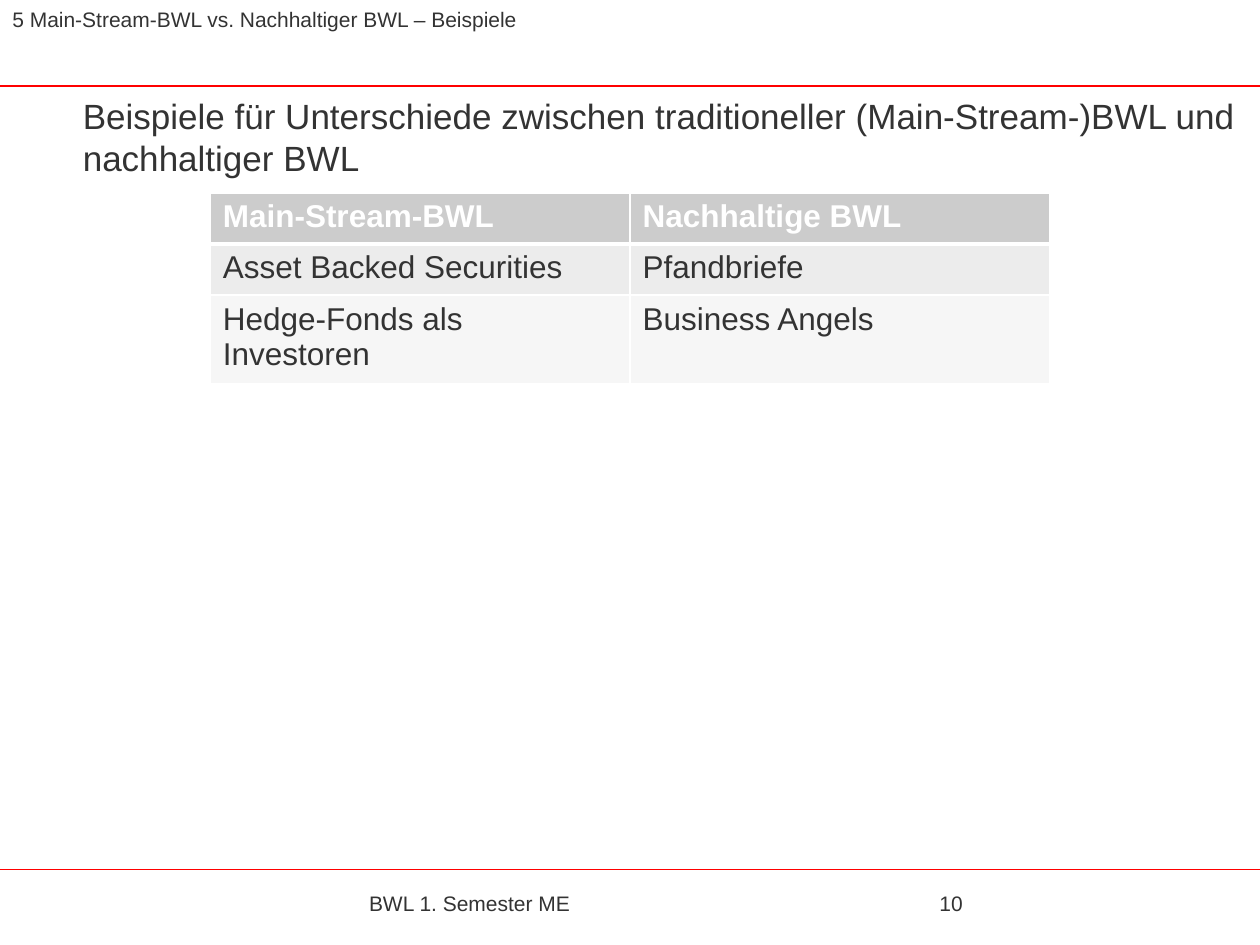
from dataclasses import dataclass

from lxml.etree import SubElement
from pptx import Presentation
from pptx.dml.color import RGBColor as Rgb
from pptx.enum.shapes import MSO_CONNECTOR as Connector
from pptx.enum.text import MSO_ANCHOR as Anchor, PP_ALIGN as Align
from pptx.oxml.ns import qn
from pptx.util import Cm, Pt


@dataclass(frozen=True)
class Theme:
    font: str = "Arial"
    text: str = "333333"
    rule: str = "FF0000"
    white: str = "FFFFFF"
    row_fills: tuple = ("CCCCCC", "ECECEC", "F6F6F6")
    small: int = 12
    body: int = 18
    title: int = 20


THEME = Theme()
SLIDE_WIDTH, SLIDE_HEIGHT = 25.4, 19.05
RULE_HEIGHTS = (1.73, 17.53)

# text, (left, top, width, height) in cm, type size, anchor, space before in points
TEXTS = [
    ("5 Main-Stream-BWL vs. Nachhaltiger BWL – Beispiele",
     (0, 0, 25.96, 0.86), THEME.small, Anchor.TOP, 1.2),
    ("Beispiele für Unterschiede zwischen traditioneller (Main-Stream-)BWL und nachhaltiger BWL",
     (1.42, 2.03, 23.98, 1.7), THEME.title, Anchor.BOTTOM, 0),
    ("BWL 1. Semester ME", (7.19, 17.78, 11, 0.84), THEME.small, Anchor.MIDDLE, 0),
    ("10", (18.69, 17.78, 5.28, 0.84), THEME.small, Anchor.MIDDLE, 0),
]

COMPARISON = [
    ("Main-Stream-BWL", "Nachhaltige BWL"),
    ("Asset Backed Securities", "Pfandbriefe"),
    ("Hedge-Fonds als Investoren", "Business Angels"),
]
TABLE_TOP, COLUMN_WIDTH = 3.89, 8.46
ROW_HEIGHTS = (1.03, 1.03, 1.68)


def style(paragraph, size, color=THEME.text, bold=False):
    font = paragraph.font
    font.name, font.size, font.bold = THEME.font, Pt(size), bold
    font.color.rgb = Rgb.from_string(color)
    paragraph.alignment = Align.LEFT


def add_rule(slide, height):
    rule = slide.shapes.add_connector(
        Connector.STRAIGHT, 0, Cm(height), Cm(SLIDE_WIDTH), Cm(height))
    rule.line.color.rgb = Rgb.from_string(THEME.rule)
    rule.line.width = Pt(1)
    SubElement(rule.element.spPr, qn("a:effectLst"))


def add_text(slide, text, place, size, anchor, space_before):
    box = slide.shapes.add_textbox(*map(Cm, place))
    frame = box.text_frame
    frame.word_wrap = True
    frame.vertical_anchor = anchor
    para = frame.paragraphs[0]
    para.text = text
    para.space_before = Pt(space_before)
    style(para, size)


def set_borders(cell, widths):
    """Draw white borders; widths maps a side (L, R, T, B) to points."""
    properties = cell._tc.get_or_add_tcPr()
    for position, (side, width) in enumerate(widths.items()):
        line = properties.makeelement(qn(f"a:ln{side}"), {"w": str(Pt(width))})
        fill = SubElement(line, qn("a:solidFill"))
        SubElement(fill, qn("a:srgbClr"), val=THEME.white)
        properties.insert(position, line)


def add_comparison(slide):
    width = COLUMN_WIDTH * len(COMPARISON[0])
    table = slide.shapes.add_table(
        len(COMPARISON), len(COMPARISON[0]), Cm((SLIDE_WIDTH - width) / 2),
        Cm(TABLE_TOP), Cm(width), Cm(sum(ROW_HEIGHTS))).table
    for column in table.columns:
        column.width = Cm(COLUMN_WIDTH)
    for row, texts in enumerate(COMPARISON):
        table.rows[row].height = Cm(ROW_HEIGHTS[row])
        header = row == 0
        for column, text in enumerate(texts):
            cell = table.cell(row, column)
            cell.text = text
            cell.fill.solid()
            cell.fill.fore_color.rgb = Rgb.from_string(THEME.row_fills[row])
            style(cell.text_frame.paragraphs[0], THEME.body,
                  THEME.white if header else THEME.text, header)
            set_borders(cell, {"L": 1, "R": 1, "T": 3 if row == 1 else 1,
                               "B": 3 if header else 1})


def main():
    deck = Presentation()
    deck.slide_width, deck.slide_height = Cm(SLIDE_WIDTH), Cm(SLIDE_HEIGHT)
    slide = deck.slides.add_slide(deck.slide_layouts[6])
    for height in RULE_HEIGHTS:
        add_rule(slide, height)
    for entry in TEXTS:
        add_text(slide, *entry)
    add_comparison(slide)
    deck.save("out.pptx")


if __name__ == "__main__":
    main()
